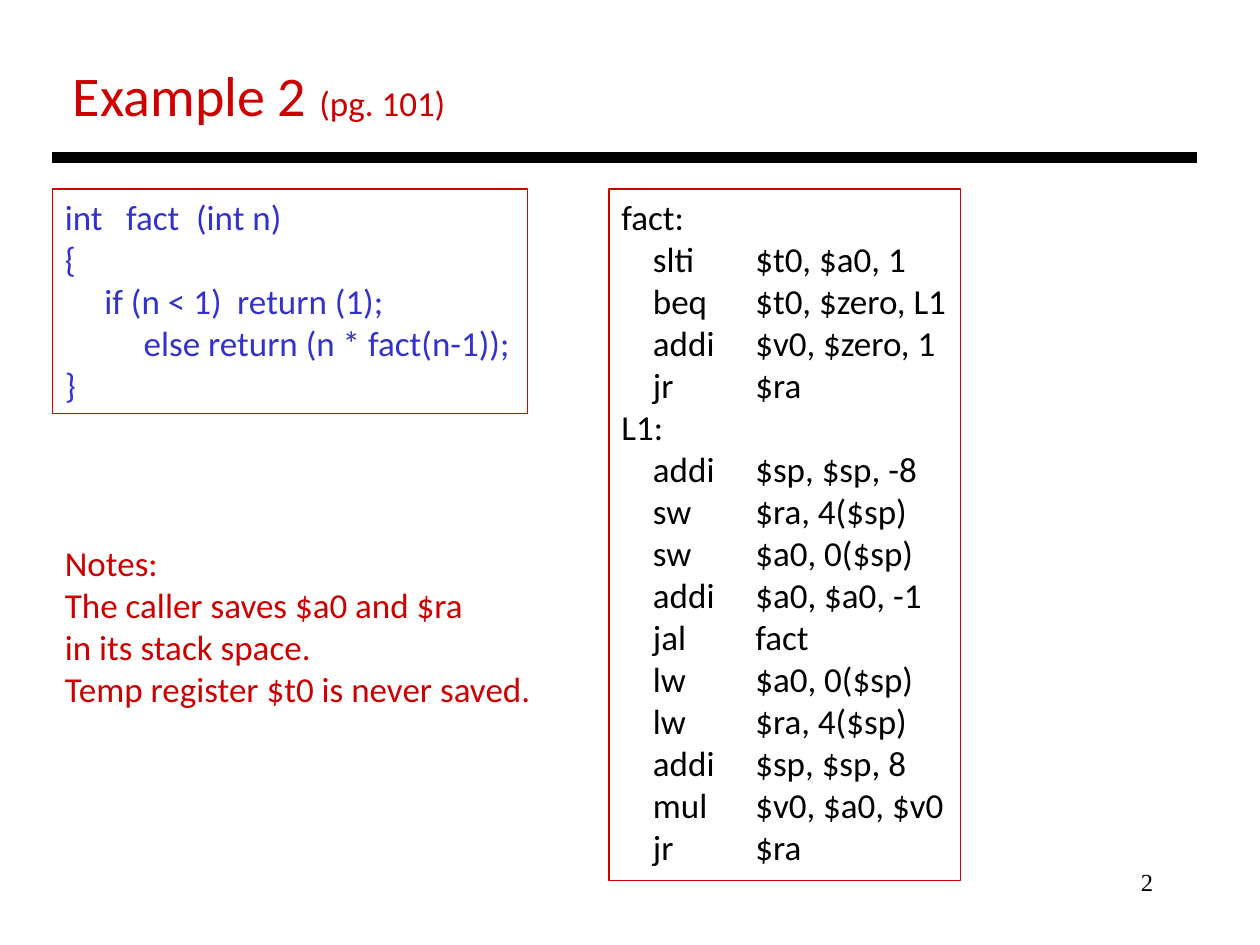
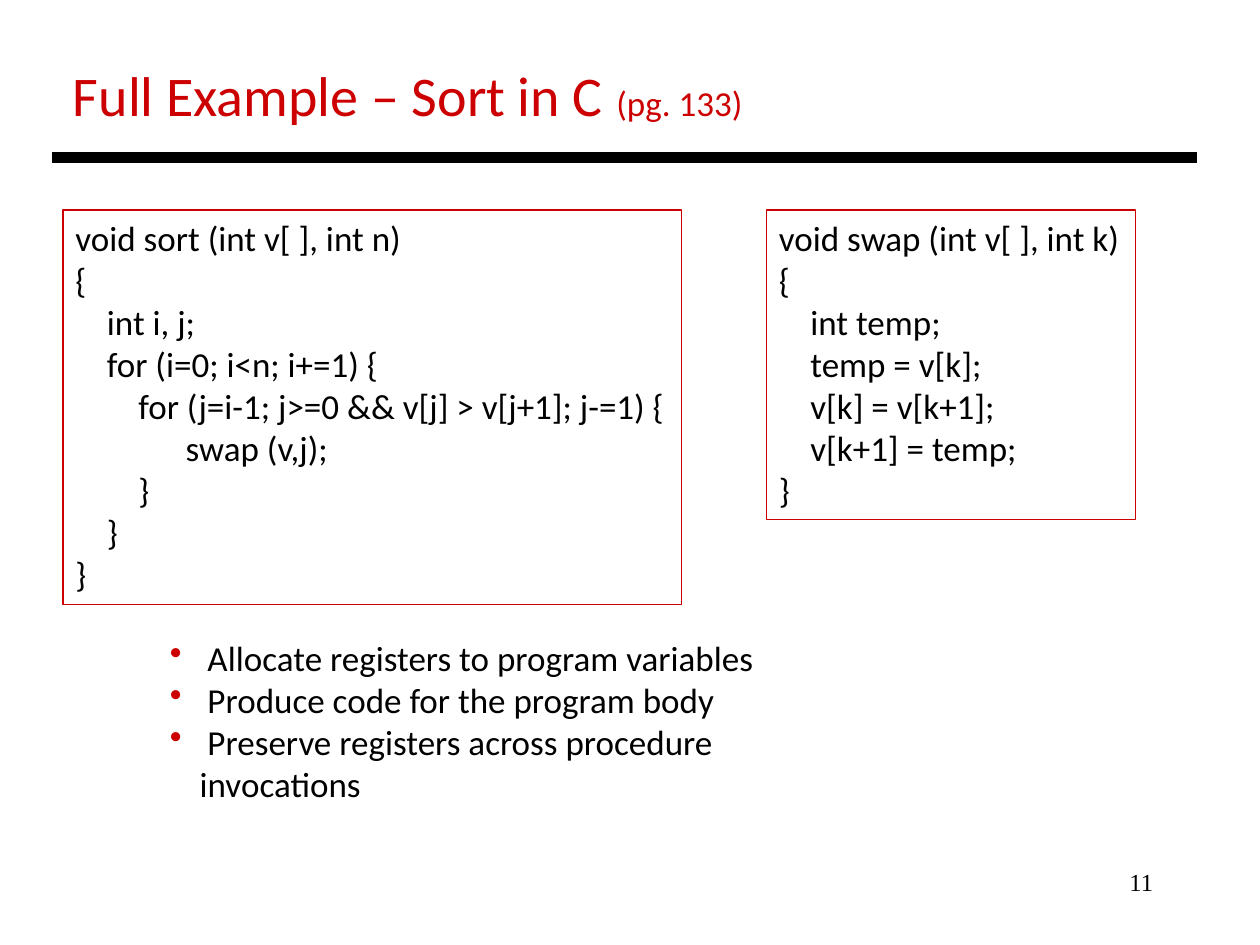
from lxml.etree import SubElement
from pptx import Presentation
from pptx.dml.color import RGBColor
from pptx.enum.shapes import MSO_CONNECTOR, MSO_SHAPE
from pptx.enum.text import MSO_ANCHOR, PP_ALIGN
from pptx.oxml.ns import qn
from pptx.util import Pt

RED, BLUE, BLACK = "CC0000", "3333CC", "000000"
BODY_FONT, NUMBER_FONT = "Calibri", "Times New Roman"
BODY_SIZE, TITLE_SIZE, NUMBER_SIZE = 20, 32, 14
LINE_HEIGHT, INSET = 24.25, 3.6
STEP = 18

FACT_C = """int\tfact\t(int n)
{
\tif (n < 1)\treturn (1);
\t\telse return (n * fact(n-1));
}"""

FACT_ASSEMBLY = """fact:
\tslti\t$t0, $a0, 1
\tbeq\t$t0, $zero, L1
\taddi\t$v0, $zero, 1
\tjr\t$ra
L1:
\taddi\t$sp, $sp, -8
\tsw\t$ra, 4($sp)
\tsw\t$a0, 0($sp)
\taddi\t$a0, $a0, -1
\tjal\tfact
\tlw\t$a0, 0($sp)
\tlw\t$ra, 4($sp)
\taddi\t$sp, $sp, 8
\tmul\t$v0, $a0, $v0
\tjr\t$ra"""

FACT_NOTES = """Notes:
The caller saves $a0 and $ra
in its stack space.
Temp register $t0 is never saved."""

SORT_C = """void sort (int v[ ], int n)
{
\tint i, j;
\tfor (i=0; i<n; i+=1) {
\t\tfor (j=i-1; j>=0 && v[j] > v[j+1]; j-=1) {
\t\t\tswap (v,j);
\t\t}
\t}
}"""

SWAP_C = """void swap (int v[ ], int k)
{
\tint temp;
\ttemp = v[k];
\tv[k] = v[k+1];
\tv[k+1] = temp;
}"""

SORT_STEPS = """ Allocate registers to program variables
 Produce code for the program body
 Preserve registers across procedure invocations"""


def color(value):
    return RGBColor.from_string(value)


def set_tabs(paragraph, stops):
    tab_list = SubElement(paragraph._p.get_or_add_pPr(), qn("a:tabLst"))
    for stop in stops:
        SubElement(tab_list, qn("a:tab"), pos=str(Pt(stop)), algn="l")


class Deck:
    """Holds the lecture style and adds elements to the current slide."""

    def __init__(self):
        self.presentation = Presentation()
        self.presentation.slide_width = Pt(720)
        self.presentation.slide_height = Pt(540)
        self.slide = None

    def start_slide(self, title, page, number):
        self.slide = self.presentation.slides.add_slide(self.presentation.slide_layouts[6])
        heading = self.text(f"{title} ", 34.6, 31, 600, 46, RED, TITLE_SIZE)
        reference = heading.paragraphs[0].add_run()
        reference.text = f"(pg. {page})"
        self.format_run(reference, RED, BODY_SIZE)
        self.rule(30, 684, 90)
        footer = self.text(str(number), 516, 492, 150, 36, BLACK, NUMBER_SIZE, NUMBER_FONT)
        footer.paragraphs[0].alignment = PP_ALIGN.RIGHT

    def format_run(self, run, text_color, size, font=BODY_FONT):
        run.font.name = font
        run.font.size = Pt(size)
        run.font.color.rgb = color(text_color)

    def fill_text(self, text_frame, text, text_color, size=BODY_SIZE, font=BODY_FONT):
        text_frame.text = text
        text_frame.word_wrap = True
        text_frame.vertical_anchor = MSO_ANCHOR.TOP
        for paragraph in text_frame.paragraphs:
            paragraph.alignment = PP_ALIGN.LEFT
            for run in paragraph.runs:
                self.format_run(run, text_color, size, font)

    def text(self, text, left, top, width, height, text_color, size=BODY_SIZE, font=BODY_FONT):
        shape = self.slide.shapes.add_textbox(Pt(left), Pt(top), Pt(width), Pt(height))
        self.fill_text(shape.text_frame, text, text_color, size, font)
        return shape.text_frame

    def rule(self, left, right, top):
        line = self.slide.shapes.add_connector(
            MSO_CONNECTOR.STRAIGHT, Pt(left), Pt(top), Pt(right), Pt(top))
        line.line.color.rgb = color(BLACK)
        line.line.width = Pt(6)
        SubElement(line._element.spPr, qn("a:effectLst"))

    def code(self, text, left, top, width, stops, text_color=BLACK, first_stops=None):
        height = len(text.splitlines()) * LINE_HEIGHT + 2 * INSET
        shape = self.slide.shapes.add_shape(
            MSO_SHAPE.RECTANGLE, Pt(left), Pt(top), Pt(width), Pt(height))
        shape.shadow.inherit = False
        shape.fill.background()
        shape.line.color.rgb = color(RED)
        shape.line.width = Pt(0.75)
        self.fill_text(shape.text_frame, text, text_color)
        shape.text_frame.margin_right = 0
        for index, paragraph in enumerate(shape.text_frame.paragraphs):
            set_tabs(paragraph, first_stops if first_stops and index == 0 else stops)

    def bullets(self, text, left, top, width, height):
        for paragraph in self.text(text, left, top, width, height, BLACK).paragraphs:
            properties = paragraph._p.get_or_add_pPr()
            properties.set("marL", str(Pt(17)))
            properties.set("indent", str(Pt(-17)))
            bullet_color = SubElement(properties, qn("a:buClr"))
            SubElement(bullet_color, qn("a:srgbClr"), val=RED)
            SubElement(properties, qn("a:buChar"), char="•")


def main():
    deck = Deck()

    deck.start_slide("Example 2", 101, 2)
    deck.code(FACT_C, 30, 108, 271.4, (22.6, 45, 98.5), BLUE, first_stops=(35, 75))
    deck.code(FACT_ASSEMBLY, 348, 108, 201, (STEP, 76.5))
    deck.text(FACT_NOTES, 30, 306, 290, 104.4, RED)

    deck.start_slide("Full Example – Sort in C", 133, 11)
    deck.bullets(SORT_STEPS, 90, 360, 416, 80)
    deck.code(SORT_C, 36, 120, 353.5, (STEP, 2 * STEP, 3.5 * STEP))
    deck.code(SWAP_C, 438, 120, 211, (STEP,))

    deck.presentation.save("out.pptx")


if __name__ == "__main__":
    main()
